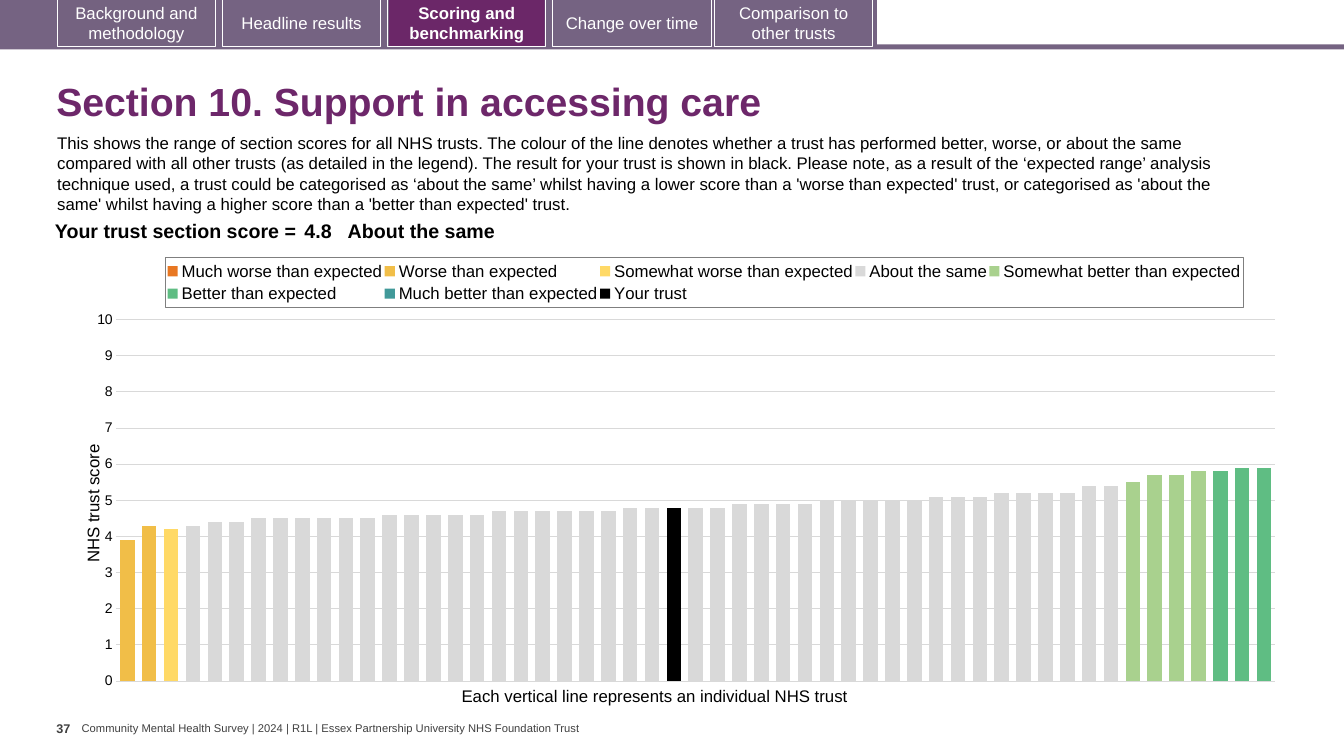
from copy import deepcopy

from pptx import Presentation
from pptx.chart.data import CategoryChartData
from pptx.dml.color import RGBColor
from pptx.enum.chart import XL_CHART_TYPE as ChartType, XL_LEGEND_POSITION as LegendPos, XL_TICK_MARK as Tick
from pptx.enum.shapes import MSO_SHAPE as Shape
from pptx.enum.text import MSO_ANCHOR as Anchor, PP_ALIGN as Align
from pptx.oxml import parse_xml
from pptx.oxml.ns import nsdecls, qn
from pptx.util import Pt

COLORS = {
    "band": "756382", "tab": "746280", "active": "6B2768", "heading": "6D276A",
    "white": "FFFFFF", "black": "000000", "footer": "404040",
    "grid": "D9D9D9", "frame": "7F7F7F",
    "much_worse": "E87722", "worse": "F1BE48", "somewhat_worse": "FFD966",
    "same": "D9D9D9", "somewhat_better": "A9D18E", "better": "5FBD83", "much_better": "419999",
}
TRUSTS = 53
SAME_COUNTS = {4.3: 1, 4.4: 2, 4.5: 6, 4.6: 5, 4.7: 6, 4.8: 5, 4.9: 4, 5: 5, 5.1: 3, 5.2: 4, 5.4: 2}
SAME_SCORES = [score for score, count in SAME_COUNTS.items() for _ in range(count)]
BANDS = [
    ("Much worse than expected", "much_worse", 0, []),
    ("Worse than expected", "worse", 0, [3.9, 4.3]),
    ("Somewhat worse than expected", "somewhat_worse", 2, [4.2]),
    ("About the same", "same", 3, SAME_SCORES),
    ("Somewhat better than expected", "somewhat_better", 46, [5.5, 5.7, 5.7, 5.8]),
    ("Better than expected", "better", 50, [5.8, 5.9, 5.9]),
    ("Much better than expected", "much_better", 0, []),
    ("Your trust", "black", 25, [4.8]),
]
TABS = [
    (41, "Background and methodology", "tab"),
    (159, "Headline results", None),
    (277, "Scoring and benchmarking", None),
    (395, "Change over time", "band"),
    (510.5, "Comparison to other trusts", "band"),
]
INTRO = (
    "This shows the range of section scores for all NHS trusts. The colour of the line denotes whether "
    "a trust has performed better, worse, or about the same compared with all other trusts (as detailed "
    "in the legend). The result for your trust is shown in black. Please note, as a result of the "
    "‘expected range’ analysis technique used, a trust could be categorised as ‘about the same’ whilst "
    "having a lower score than a 'worse than expected' trust, or categorised as 'about the same' whilst "
    "having a higher score than a 'better than expected' trust."
)


def rgb(name):
    return RGBColor.from_string(COLORS[name])


def style_font(font, size, color="black", bold=False):
    font.name, font.size, font.bold = "Arial", Pt(size), bold
    font.color.rgb = rgb(color)


def write(frame, text, size=12, color="black", bold=False, align=Align.LEFT, spacing=None):
    paragraph = frame.paragraphs[0]
    paragraph.alignment = align
    if spacing:
        paragraph.line_spacing = spacing
    run = paragraph.add_run()
    run.text = text
    style_font(run.font, size, color, bold)


def place(part, index, x, y, w=None, h=None, inner=False):
    for layout in part.findall(qn("c:layout")):
        part.remove(layout)
    target = '<c:layoutTarget val="inner"/>' if inner else ""
    modes = '<c:xMode val="edge"/><c:yMode val="edge"/>'
    sizes = "".join(f'<c:{tag} val="{value}"/>' for tag, value in zip("xywh", (x, y, w, h)) if value is not None)
    part.insert(index, parse_xml(
        f'<c:layout {nsdecls("c")}><c:manualLayout>{target}{modes}{sizes}</c:manualLayout></c:layout>'))


def move_to_right_axis(plot_area):
    bars = plot_area.find(qn("c:barChart"))
    right_bars = deepcopy(bars)
    bars.remove(bars.findall(qn("c:ser"))[-1])
    for series in right_bars.findall(qn("c:ser"))[:-1]:
        right_bars.remove(series)
    bars.addnext(right_bars)
    categories, values = plot_area.find(qn("c:catAx")), plot_area.find(qn("c:valAx"))
    right_categories, right_values = deepcopy(categories), deepcopy(values)
    values.addnext(right_values)
    right_values.addnext(right_categories)
    for tag in ("c:majorGridlines", "c:title"):
        right_values.remove(right_values.find(qn(tag)))
    for tag, setting in (("axPos", "r"), ("majorTickMark", "out"), ("tickLblPos", "none"), ("crosses", "max")):
        right_values.find(qn(f"c:{tag}")).set("val", setting)
    new_ids = {axis.find(qn("c:axId")).get("val"): new_id
               for axis, new_id in ((categories, "50010"), (values, "50020"))}
    for part in (right_bars, right_categories, right_values):
        for reference in part.findall(qn("c:axId")) + part.findall(qn("c:crossAx")):
            reference.set("val", new_ids[reference.get("val")])


class SlideBuilder:
    def __init__(self, slide):
        self.shapes = slide.shapes

    def box(self, x, y, w, h, fill=None, line=None, text=None, **format):
        rect = self.shapes.add_shape(Shape.RECTANGLE, Pt(x), Pt(y), Pt(w), Pt(h))
        rect.shadow.inherit = False
        if fill:
            rect.fill.solid()
            rect.fill.fore_color.rgb = rgb(fill)
        else:
            rect.fill.background()
        if line:
            rect.line.color.rgb = rgb(line)
            rect.line.width = Pt(0.75)
        else:
            rect.line.fill.background()
        if text:
            rect.text_frame.word_wrap = True
            rect.text_frame.vertical_anchor = Anchor.MIDDLE
            write(rect.text_frame, text, **format)

    def text(self, x, y, w, h, text, wrap=True, anchor=Anchor.TOP, margins=(7.2, 3.6), **format):
        frame = self.shapes.add_textbox(Pt(x), Pt(y), Pt(w), Pt(h)).text_frame
        frame.word_wrap, frame.vertical_anchor = wrap, anchor
        frame.margin_left = frame.margin_right = Pt(margins[0])
        frame.margin_top = frame.margin_bottom = Pt(margins[1])
        write(frame, text, **format)

    def score_row(self, x, y, h, columns):
        width = sum(column[0] for column in columns)
        table = self.shapes.add_table(1, len(columns), Pt(x), Pt(y), Pt(width), Pt(h)).table
        table.first_row = table.horz_banding = False
        for index, (column_width, text, side, align) in enumerate(columns):
            table.columns[index].width = Pt(column_width)
            cell = table.cell(0, index)
            cell.fill.background()
            cell.margin_left = cell.margin_right = Pt(side)
            cell.margin_top = cell.margin_bottom = Pt(2.88)
            write(cell.text_frame, text, size=14, bold=True, align=align)

    def score_chart(self, x, y, w, h):
        data = CategoryChartData()
        data.categories = [str(number) for number in range(1, TRUSTS + 1)]
        for name, _, start, scores in BANDS:
            data.add_series(name, [None] * start + scores + [None] * (TRUSTS - start - len(scores)))
        chart = self.shapes.add_chart(ChartType.COLUMN_CLUSTERED, Pt(x), Pt(y), Pt(w), Pt(h), data).chart
        chart.has_title = False
        style_font(chart.font, 10)
        bars = chart.plots[0]
        bars.gap_width, bars.overlap, bars.vary_by_categories = 50, 100, False
        for series, (_, color, _, _) in zip(bars.series, BANDS):
            series.format.fill.solid()
            series.format.fill.fore_color.rgb = rgb(color)
        chart.category_axis.visible = False

        scale = chart.value_axis
        scale.minimum_scale, scale.maximum_scale, scale.major_unit = 0, 10, 1
        scale.major_tick_mark = scale.minor_tick_mark = Tick.NONE
        scale.format.line.fill.background()
        scale.major_gridlines.format.line.color.rgb = rgb("grid")
        scale.major_gridlines.format.line.width = Pt(0.75)
        style_font(scale.tick_labels.font, 10)
        write(scale.axis_title.text_frame, "NHS trust score")
        title = scale.axis_title._element
        title.find(".//" + qn("a:bodyPr")).set("rot", "-5400000")
        place(title, 1, 0.01, 0.43)

        chart.has_legend = True
        chart.legend.position = LegendPos.TOP
        chart.legend.include_in_layout = False
        style_font(chart.legend.font, 12)
        legend = chart.legend._element
        place(legend, 1, 0.08, 0.02, 0.88, 0.11)
        legend.find(qn("c:overlay")).addnext(parse_xml(
            f'<c:spPr {nsdecls("c", "a")}><a:ln w="9525"><a:solidFill>'
            f'<a:srgbClr val="{COLORS["frame"]}"/></a:solidFill></a:ln></c:spPr>'))

        plot_area = chart._chartSpace.find(".//" + qn("c:plotArea"))
        move_to_right_axis(plot_area)
        place(plot_area, 0, 0.04, 0.158, 0.946, 0.808, inner=True)


def main():
    deck = Presentation()
    deck.slide_width, deck.slide_height = Pt(960), Pt(540)
    page = SlideBuilder(deck.slides.add_slide(deck.slide_layouts[6]))

    page.text(58.3, 515.5, 361, 9.4, "Community Mental Health Survey | 2024 | R1L | Essex Partnership "
              "University NHS Foundation Trust", wrap=False, anchor=Anchor.MIDDLE, margins=(0, 0),
              size=8, color="footer")
    page.box(0, 31.7, 960, 3.6, "band")
    page.box(0, 0, 626.4, 33.8, "band")
    page.box(42.5, 0, 111, 33, "tab")
    page.box(278, 0, 111, 33, "active")
    for left, label, fill in TABS:
        page.box(left, -0.7, 113, 34, fill, "white", label, color="white",
                 bold=label.startswith("Scoring"), align=Align.CENTER)

    page.text(33.1, 48.2, 899, 52, "Section 10. Support in accessing care", anchor=Anchor.MIDDLE,
              size=28, color="heading", bold=True, spacing=0.9)
    page.text(40.3, 511.2, 18, 28.8, "37", wrap=False, margins=(0, 3.6), size=9, color="footer", bold=True)
    page.text(33.8, 91.4, 873.4, 65.5, INTRO)
    page.text(322.6, 486, 296, 21.6, "Each vertical line represents an individual NHS trust", wrap=False)
    page.score_chart(48.2, 177.8, 874.8, 319.7)
    page.score_row(25.2, 154.8, 22, [
        (189.4, "Your trust section score =", 2.88, Align.RIGHT),
        (33.8, "4.8", 2.88, Align.LEFT),
        (618.5, "About the same", 0, Align.LEFT),
    ])
    deck.save("out.pptx")


if __name__ == "__main__":
    main()
